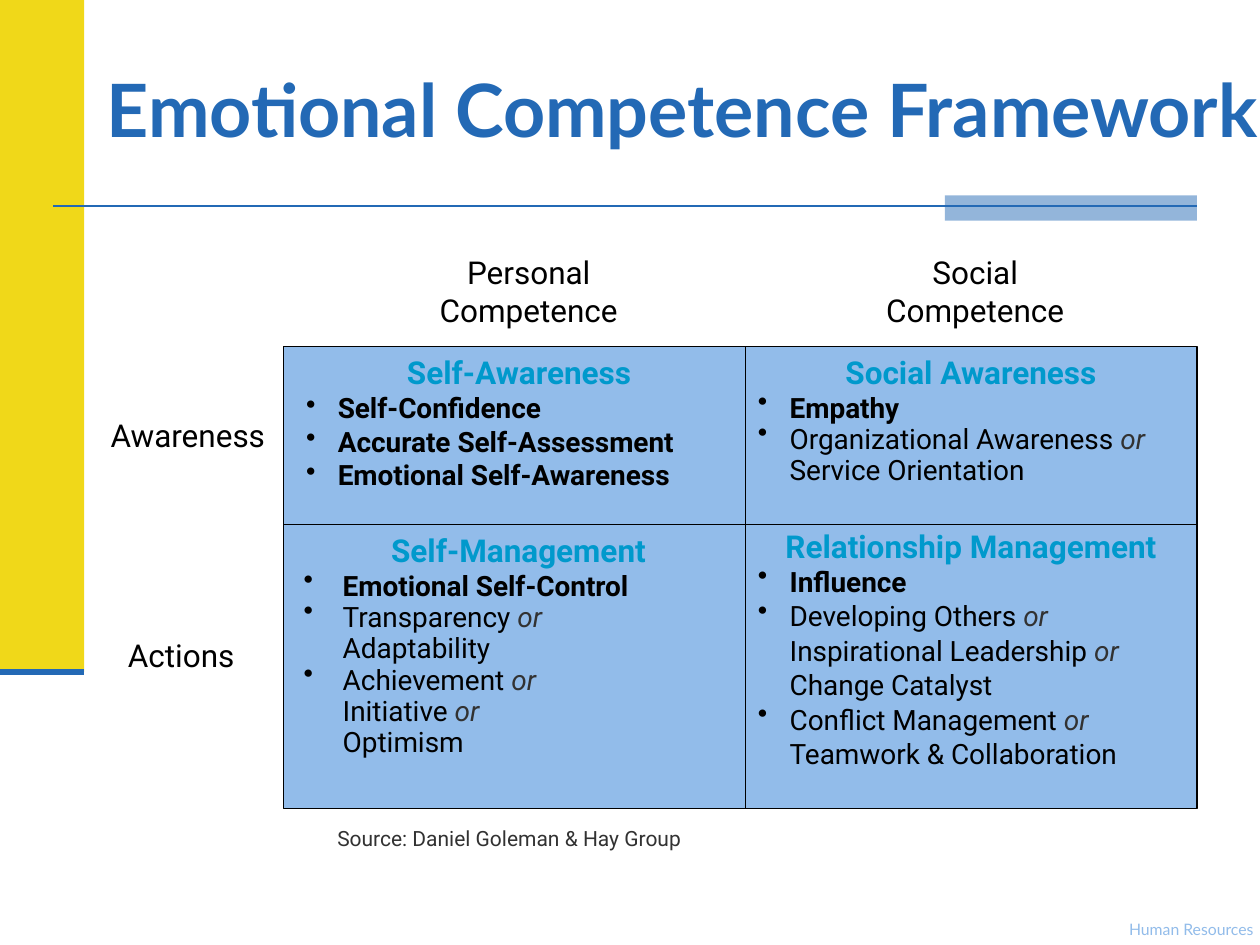
import dataclasses

import lxml.etree
import pptx
import pptx.dml.color
import pptx.enum.shapes
import pptx.enum.text
import pptx.oxml.ns
import pptx.util

Cm = pptx.util.Cm
Pt = pptx.util.Pt
Align = pptx.enum.text.PP_ALIGN
qn = pptx.oxml.ns.qn


@dataclasses.dataclass(frozen=True)
class Theme:
    blue: str = "2369B5"
    yellow: str = "F0D819"
    panel: str = "92BCEA"
    heading: str = "0099CC"
    black: str = "000000"
    grey: str = "323232"
    title_font: str = "Lato"
    body_font: str = "Roboto"
    title_size: float = 42
    label_size: float = 18
    item_size: float = 16
    source_size: float = 12
    footer_size: float = 9


theme = Theme()
rgb = pptx.dml.color.RGBColor.from_string


def add_span(para, text, size, color, bold=False, italic=False, font=theme.body_font):
    span = para.add_run()
    span.text = text
    span.font.name = font
    span.font.size = Pt(size)
    span.font.color.rgb = rgb(color)
    span.font.bold = bold
    span.font.italic = italic


def add_box(page, left, top, width, height):
    box = page.shapes.add_textbox(Cm(left), Cm(top), Cm(width), Cm(height))
    box.text_frame.word_wrap = True
    box.text_frame.auto_size = pptx.enum.text.MSO_AUTO_SIZE.SHAPE_TO_FIT_TEXT
    return box


deck = pptx.Presentation()
deck.slide_width, deck.slide_height = Cm(25.4), Cm(19.05)
page = deck.slides.add_slide(deck.slide_layouts[6])

grid_left, grid_middle, grid_right = 5.72, 15.03, 24.13
grid_top, grid_center, grid_bottom = 6.99, 10.58, 16.3
band_width, band_height, rule_y = 1.7, 13.55, 4.15

panels = [
    (0, 0, band_width, band_height, theme.yellow, None),
    (19.05, 3.94, 5.08, 0.51, theme.blue, None),
    (grid_left, grid_top, grid_right - grid_left, grid_bottom - grid_top,
     theme.panel, theme.black),
]
for left, top, width, height, fill, outline in panels:
    panel = page.shapes.add_shape(
        pptx.enum.shapes.MSO_SHAPE.RECTANGLE, Cm(left), Cm(top), Cm(width), Cm(height))
    panel.shadow.inherit = False
    panel.fill.solid()
    panel.fill.fore_color.rgb = rgb(fill)
    if outline:
        panel.line.color.rgb = rgb(outline)
        panel.line.width = Pt(0.75)
    else:
        panel.line.fill.background()
    if fill == theme.blue:
        color_node = panel.fill._xPr.find(qn("a:solidFill"))[0]
        lxml.etree.SubElement(color_node, qn("a:alpha")).set("val", "49000")

rules = [
    (0, band_height, band_width, band_height, theme.blue, 3.5),
    (1.07, rule_y, grid_right, rule_y, theme.blue, 1.5),
    (grid_middle, grid_top, grid_middle, grid_bottom, theme.black, 0.75),
    (grid_left, grid_center, grid_right, grid_center, theme.black, 0.75),
]
for x1, y1, x2, y2, color, weight in rules:
    rule = page.shapes.add_connector(
        pptx.enum.shapes.MSO_CONNECTOR.STRAIGHT, Cm(x1), Cm(y1), Cm(x2), Cm(y2))
    rule.line.color.rgb = rgb(color)
    rule.line.width = Pt(weight)
    lxml.etree.SubElement(rule._element.spPr, qn("a:effectLst"))

title = add_box(page, 1.9, 0.18, 24, 3.99)
title.text_frame.auto_size = pptx.enum.text.MSO_AUTO_SIZE.NONE
title.text_frame.vertical_anchor = pptx.enum.text.MSO_ANCHOR.MIDDLE
add_span(title.text_frame.paragraphs[0], "Emotional Competence Framework",
         theme.title_size, theme.blue, bold=True, font=theme.title_font)

label_style = (theme.label_size, theme.black, theme.body_font)
labels = [
    ("Personal Competence", 7.7, 4.98, 5.92, 1.78, Align.CENTER, label_style),
    ("Social Competence", 17.22, 4.98, 4.88, 1.78, Align.CENTER, label_style),
    ("Awareness", 1.98, 8.26, 4.88, 1.02, Align.LEFT, label_style),
    ("Actions", 2.33, 12.7, 4.01, 1.02, Align.LEFT, label_style),
    ("Source: Daniel Goleman & Hay Group", 6.55, 16.51, 8.26, 0.76, Align.LEFT,
     (theme.source_size, theme.grey, theme.body_font)),
    ("Human Resources", 21.79, 18.42, 4.45, 0.64, Align.CENTER,
     (theme.footer_size, theme.panel, theme.title_font)),
]
for text, left, top, width, height, align, (size, color, font) in labels:
    para = add_box(page, left, top, width, height).text_frame.paragraphs[0]
    para.alignment = align
    add_span(para, text, size, color, font=font)

bold_item, item, more = "bold item", "item", "more"
quadrants = [
    ("Self-Awareness", 5.92, grid_top, 9.09, 3.05, 0.64, 0.64, None, [
        (bold_item, "Self-Confidence", "", None),
        (bold_item, "Accurate Self-Assessment", "", None),
        (bold_item, "Emotional Self-Awareness", "", None),
    ]),
    ("Self-Management", grid_left, grid_center, 9.32, 5.11, 0.94, 0.79, None, [
        (bold_item, "Emotional Self-Control", "", 0.5),
        (item, "Transparency ", "or", 0.5),
        (more, "Adaptability", "", 0.5),
        (item, "Achievement ", "or", 0.5),
        (more, "Initiative ", "or", 0.5),
        (more, "Optimism", "", 0.5),
    ]),
    ("Social Awareness", grid_middle, grid_top, 9.09, 3.05, 0.64, 0.64, None, [
        (bold_item, "Empathy", "", 0.5),
        (item, "Organizational Awareness ", "or", 0.5),
        (more, "Service Orientation", "", 0.5),
    ]),
    ("Relationship Management", grid_middle, grid_center, 9.09, 5.94, 0.64, 0.64, 0.9, [
        (bold_item, "Influence", "", 0.5),
        (item, "Developing Others", " or", 0.6),
        (more, "Inspirational Leadership ", "or", 0.6),
        (more, "Change Catalyst", "", 0.6),
        (item, "Conflict Management", " or", 0.6),
        (more, "Teamwork & Collaboration", "", 0.6),
    ]),
]
for heading, left, top, width, height, margin, hang, heading_spacing, entries in quadrants:
    frame = add_box(page, left, top, width, height).text_frame
    para = frame.paragraphs[0]
    para.alignment = Align.CENTER
    para.line_spacing = heading_spacing
    props = para._p.get_or_add_pPr()
    props.set("marL", str(Cm(margin)))
    props.set("indent", str(-Cm(hang)))
    add_span(para, heading, theme.label_size, theme.heading, bold=True)
    for kind, text, joiner, spacing in entries:
        para = frame.add_paragraph()
        props = para._p.get_or_add_pPr()
        props.set("marL", str(Cm(margin)))
        props.set("indent", "0" if kind == more else str(-Cm(hang)))
        if kind != more:
            lxml.etree.SubElement(props, qn("a:buChar")).set("char", "•")
        if spacing:
            para.line_spacing = spacing
            para.space_before = Pt(8.2)
        add_span(para, text, theme.item_size, theme.black, bold=kind == bold_item)
        if joiner:
            add_span(para, joiner, theme.item_size, theme.grey, italic=True)

deck.save("out.pptx")
